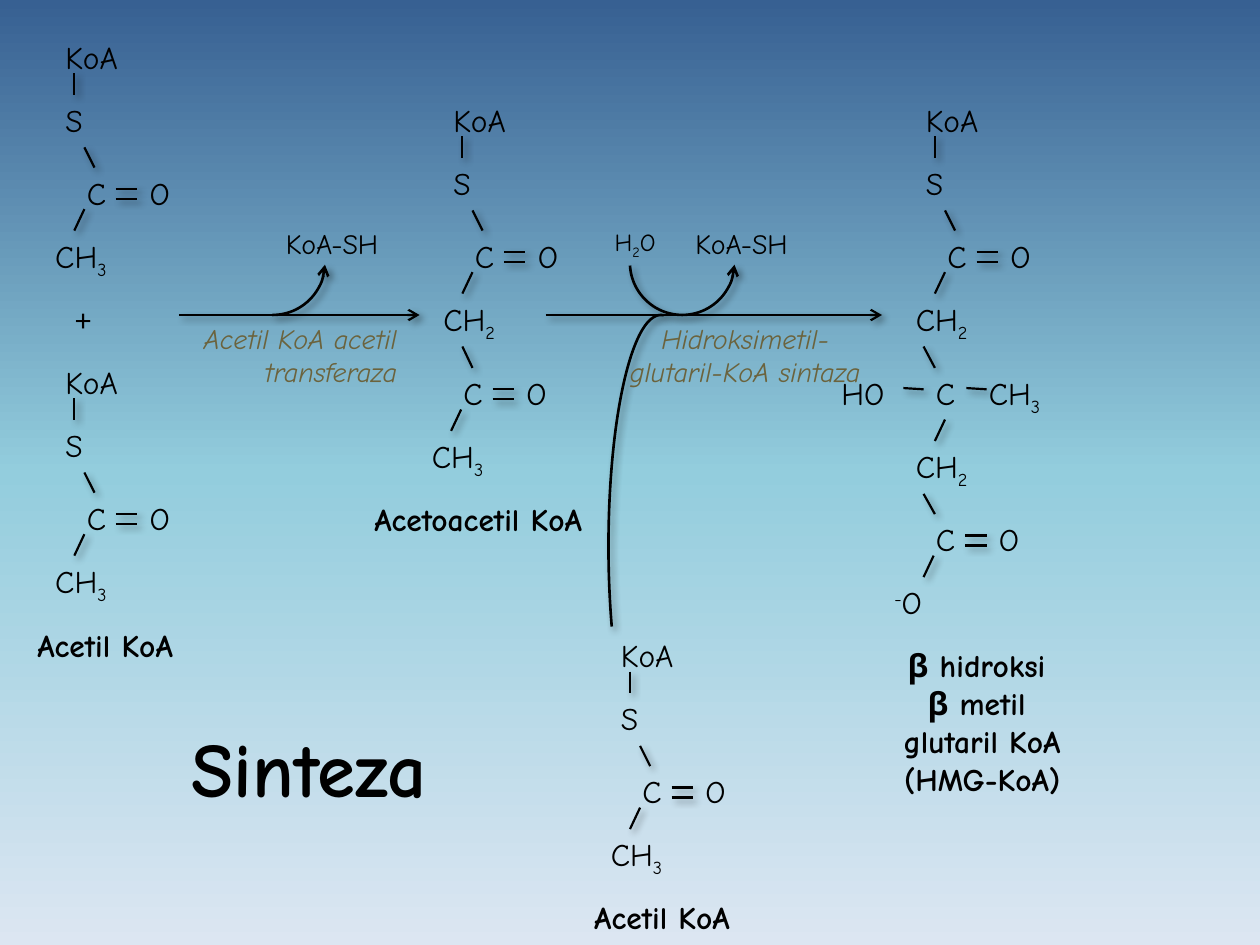
import copy

import pptx
import pptx.dml.color
import pptx.enum.shapes
import pptx.enum.text
import pptx.oxml
import pptx.oxml.ns
import pptx.util

Inches, Pt = pptx.util.Inches, pptx.util.Pt
RGBColor = pptx.dml.color.RGBColor
qn = pptx.oxml.ns.qn
ALIGN = pptx.enum.text.PP_ALIGN
FIT = pptx.enum.text.MSO_AUTO_SIZE

BLACK = RGBColor(0x00, 0x00, 0x00)
OLIVE = RGBColor(0x6B, 0x63, 0x3D)
BACKGROUND = [(0, RGBColor(0x37, 0x60, 0x92)),
              (0.5, RGBColor(0x93, 0xCD, 0xDD)),
              (1, RGBColor(0xDC, 0xE6, 0xF2))]
FONT = "Comic Neue"
SHADOW = (
    '<a:effectLst xmlns:a="http://schemas.openxmlformats.org/drawingml/2006/main">'
    '<a:outerShdw blurRad="50800" dist="38100" dir="2700000" algn="tl" rotWithShape="0">'
    '<a:srgbClr val="000000"><a:alpha val="40000"/></a:srgbClr>'
    '</a:outerShdw></a:effectLst>')

# Chemical groups: runs of (text, baseline in thousandths of a percent), box width
CH2 = [("CH", 0), ("2", -25000)]
CH3 = [("CH", 0), ("3", -25000)]
O_MINUS = [("-", 30000), ("O", 0)]
WATER = [("H", 0), ("2", -25000), ("O", 0)]
WIDTHS = {"KoA": 0.67, "S": 0.38, "C": 0.35, "O": 0.4, "HO": 0.6, "+": 0.33}

# Thioester heads: left and top of KoA, group under the carbonyl
THIOESTERS = [(0.42, 0.25, CH3), (0.42, 2.83, CH3), (4.83, 5, CH3),
              (3.5, 0.75, CH2), (7.25, 0.75, CH2)]
# Further carbonyls: left and top of C, group under it, its offset to the left
CARBONYLS = [(3.58, 2.92, CH3, 0.25), (7.33, 4.08, O_MINUS, 0.33)]
ATOMS = [("HO", 6.58, 2.92), ("C", 7.33, 2.92), (CH3, 7.75, 2.92), (CH2, 7.17, 3.5)]
BONDS = [(3.67, 2.75, 3.75, 2.92), (7.33, 2.75, 7.42, 2.92),
         (7.5, 3.33, 7.42, 3.5), (7.33, 3.92, 7.42, 4.08),
         (7.17, 3.08, 7.33, 3.09), (7.67, 3.08, 7.83, 3.09)]
REACTIONS = [(1.42, 2.5, 3.33, 2.5), (4.33, 2.5, 7, 2.5)]
# Arcs: box, start and end adjustment, arrowhead
ARCS = [((1.75, 1.67, 0.83, 0.83), (1.345, 54.175), True),
        ((5, 1.67, 0.83, 0.83), (1.345, 106.113), True),
        ((4.83, 2.5, 0.83, 3.67), (72.828, 162.417), False)]
COMPOUNDS = [(["Acetil KoA"], (0, 4.92, 1.67, 0.42)),
             (["Acetoacetil KoA"], (2.67, 3.92, 2.25, 0.42)),
             (["Acetil KoA"], (4.42, 7.08, 1.67, 0.42)),
             (["β hidroksi ", "β metil ", "glutaril KoA", "(HMG-KoA)"],
              (6.67, 5.08, 2.25, 1.17))]
ENZYMES = [("Acetil KoA acetil transferaza", (1.17, 2.5, 2.08, 0.75), ALIGN.RIGHT),
           ("Hidroksimetil-glutaril-KoA sintaza", (4.83, 2.5, 2.17, 1), ALIGN.CENTER)]
BYPRODUCTS = [(2.17, 1.75), (5.42, 1.75)]

prs = pptx.Presentation()
prs.slide_width, prs.slide_height = Inches(10), Inches(7.5)
s = prs.slides.add_slide(prs.slide_layouts[5])


def write(paragraphs, box, sp=None, size=18, font=FONT, color=BLACK, bold=False,
          italic=False, align=ALIGN.LEFT, wrap=True, fit=FIT.NONE):
    """Fill a text box; a paragraph is a string or a list of (text, baseline)."""
    lengths = [Inches(v) for v in box]
    if sp is None:
        sp = s.shapes.add_textbox(*lengths)
    else:
        sp.left, sp.top, sp.width, sp.height = lengths
    tf = sp.text_frame
    tf.word_wrap, tf.auto_size = wrap, fit
    tf.vertical_anchor = pptx.enum.text.MSO_ANCHOR.TOP
    for i, runs in enumerate(paragraphs):
        p = tf.add_paragraph() if i else tf.paragraphs[0]
        p.alignment = align
        for text, baseline in [(runs, 0)] if isinstance(runs, str) else runs:
            r = p.add_run()
            r.text = text
            f = r.font
            f.size, f.name, f.bold, f.italic = Pt(size), font, bold, italic
            f.color.rgb = color
            if baseline:
                r.font._element.set("baseline", str(baseline))


def style_line(sp, width, arrow_end=None):
    sp.line.color.rgb = BLACK
    sp.line.width = Pt(width)
    if arrow_end:
        ln = sp.line._get_or_add_ln()
        ln.append(ln.makeelement(qn("a:" + arrow_end), {"type": "arrow"}))
    sp.element.spPr.append(pptx.oxml.parse_xml(SHADOW))


def line(x1, y1, x2, y2, shapes=s.shapes, arrow_end=None):
    straight = pptx.enum.shapes.MSO_CONNECTOR.STRAIGHT
    cn = shapes.add_connector(straight, *[Inches(v) for v in (x1, y1, x2, y2)])
    style_line(cn, 1.25, arrow_end)


def atom(label, x, y, font=FONT):
    simple = isinstance(label, str)
    width = WIDTHS[label] if simple else 0.67
    write([label], (x, y, width, 0.4), font=font, wrap=not simple, fit=FIT.SHAPE_TO_FIT_TEXT)


def carbonyl(x, y, below, shift):
    """C=O with the group bonded under it."""
    atom("C", x, y)
    atom("O", x + 0.5, y)
    double = s.shapes.add_group_shape()
    for dy in (0.17, 0.25):
        line(x + 0.33, y + dy, x + 0.5, y + dy, double.shapes)
    line(x + 0.08, y + 0.33, x, y + 0.5)
    atom(below, x - shift, y + 0.5)


def thioester(x, y, below):
    """KoA-S-C=O with the group bonded under it."""
    atom("KoA", x, y)
    line(x + 0.17, y + 0.33, x + 0.17, y + 0.5)
    atom("S", x, y + 0.5)
    line(x + 0.25, y + 0.92, x + 0.33, y + 1.08)
    carbonyl(x + 0.17, y + 1.08, below, 0.25)


# Background gradient, top to bottom
fill = s.background.fill
fill.gradient()
fill.gradient_angle = 270
stops = s.element.find(".//" + qn("a:gsLst"))
stops.append(copy.deepcopy(stops[0]))
for stop, (position, color) in zip(fill.gradient_stops, BACKGROUND):
    stop.position = position
    stop.color.rgb = color

# Title
write(["Sinteza"], (1.42, 5.67, 2.44, 0.84), sp=s.shapes.title, size=44, bold=True)

# Molecules
for head in THIOESTERS:
    thioester(*head)
for group in CARBONYLS:
    carbonyl(*group)
for group in ATOMS:
    atom(*group)
for bond in BONDS:
    line(*bond)
atom("+", 0.5, 2.33, font="Calibri")

# Reaction arrows
for reaction in REACTIONS:
    line(*reaction, arrow_end="tailEnd")
for box, angles, arrow in ARCS:
    arc = s.shapes.add_shape(pptx.enum.shapes.MSO_SHAPE.ARC, *[Inches(v) for v in box])
    arc.adjustments[0], arc.adjustments[1] = angles
    arc.fill.background()
    style_line(arc, 1.5, "headEnd" if arrow else None)

# Names of compounds, enzymes and by-products
for names, box in COMPOUNDS:
    write(names, box, bold=True, align=ALIGN.CENTER)
for name, box, align in ENZYMES:
    write([name], box, size=16, color=OLIVE, italic=True, align=align)
for x, y in BYPRODUCTS:
    write(["KoA-SH"], (x, y, 1.04, 0.37), size=16, wrap=False, fit=FIT.SHAPE_TO_FIT_TEXT)
write([WATER], (4.58, 1.75, 0.92, 0.33), size=14, align=ALIGN.CENTER)

prs.save("out.pptx")
